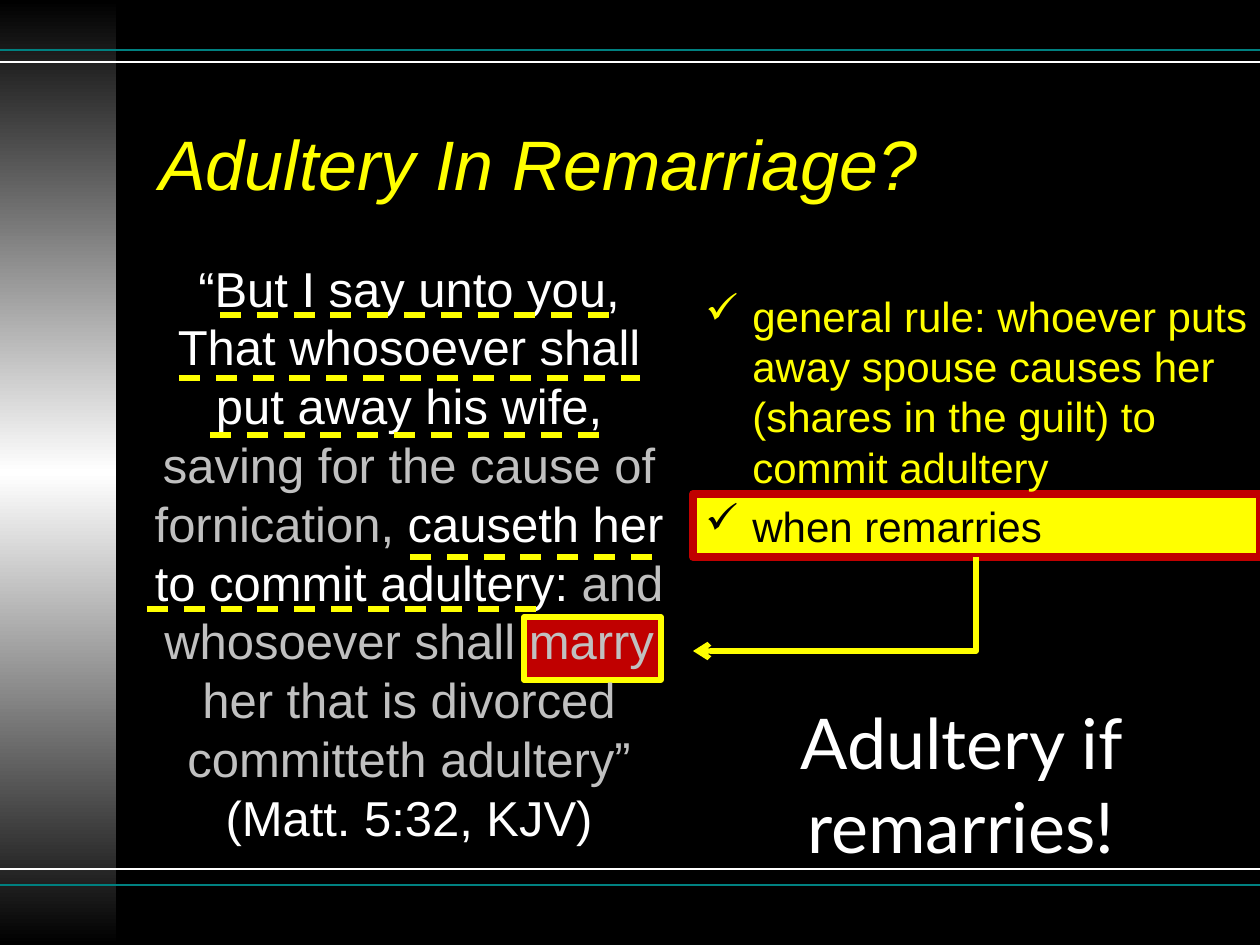
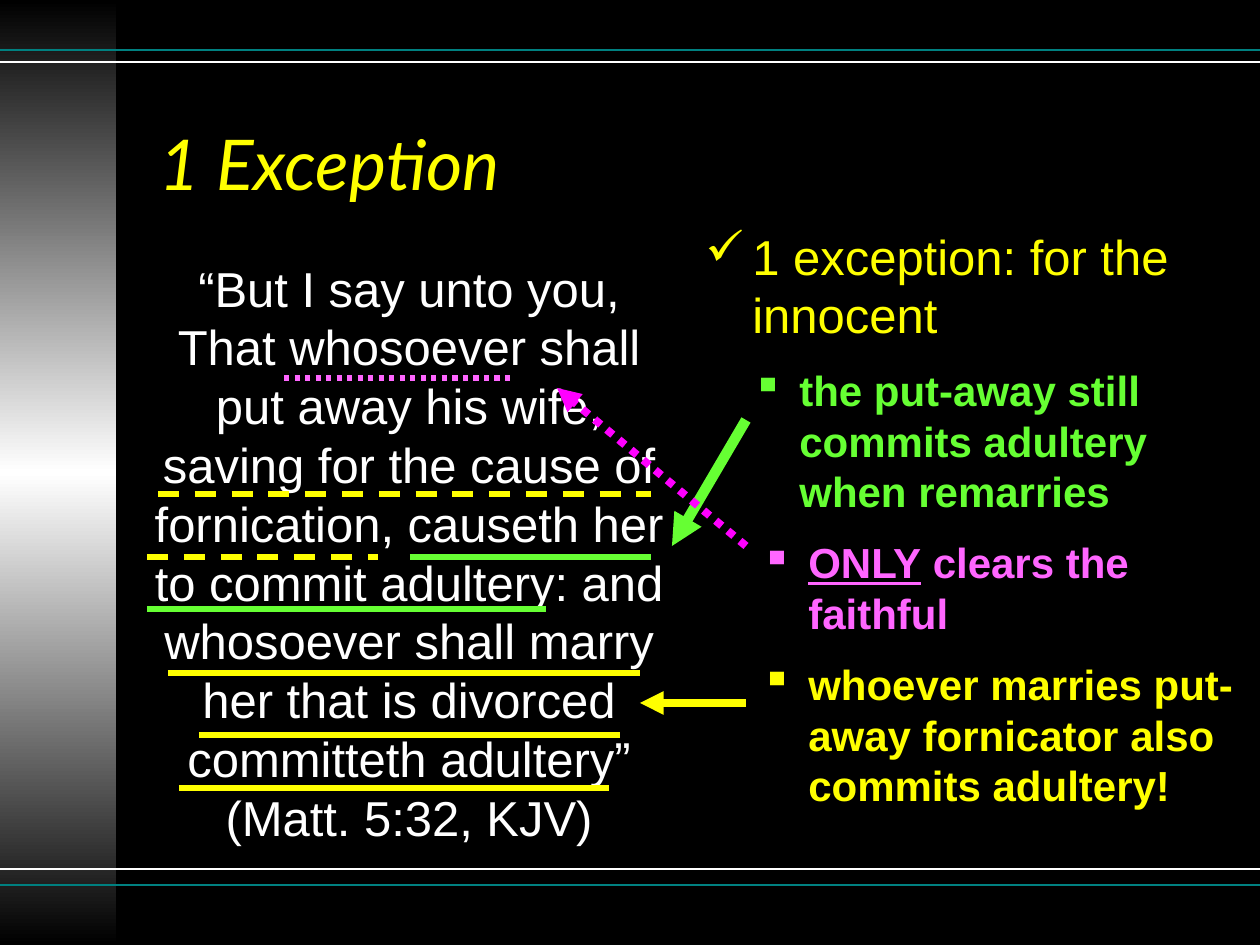
from copy import deepcopy

from lxml.etree import SubElement
from pptx import Presentation
from pptx.dml.color import RGBColor
from pptx.enum.shapes import MSO_CONNECTOR as CONN, MSO_SHAPE as SHAPE
from pptx.enum.text import MSO_ANCHOR as ANCHOR, PP_ALIGN as ALIGN
from pptx.oxml.ns import qn
from pptx.util import Emu, Pt

PX = 914400 / 126
W, H = 1260, 945

BLACK = RGBColor(0x00, 0x00, 0x00)
WHITE = RGBColor(0xFF, 0xFF, 0xFF)
SILVER = RGBColor(0xC0, 0xC0, 0xC0)
TEAL = RGBColor(0x00, 0x80, 0x80)
YELLOW = RGBColor(0xFF, 0xFF, 0x00)
RED = RGBColor(0xC0, 0x00, 0x00)
GREEN = RGBColor(0x66, 0xFF, 0x33)
PINK = RGBColor(0xFF, 0x66, 0xFF)
MAGENTA = RGBColor(0xFF, 0x00, 0xFF)

# Shared places: left, top, width, height
BAND = (0, 0, 116, H)
TITLE = (147, 84, 1071, 158)
VERSE_BOX = (136, 252, 546, 601)
RULES = [(50, TEAL), (62, WHITE), (869, WHITE), (885, TEAL)]

# Verse in parts, each with its colour on the first slide
VERSE = [
    ("“But I say unto you, That whosoever shall put away his wife, ", WHITE),
    ("saving for the cause of fornication, ", SILVER),
    ("causeth her to commit adultery: ", WHITE),
    ("and whosoever shall marry her that is divorced committeth adultery”", SILVER),
    (" (Matt. 5:32, KJV)", WHITE),
]
PLAIN_VERSE = "".join(part for part, _ in VERSE)

# Slide 1
RULE_TEXT = ("general rule: whoever puts away spouse causes her "
             "(shares in the guilt) to commit adultery")
RULE_BOX = (693, 284, 567, 217)
MARRY_BOX = (524, 617, 137, 63)
REMARRIES_BOX = (693, 494, 567, 63)
BEND = ((976, 557), (693, 651))
VERDICT_BOX = (693, 693, 536, 183)
RULE_UNDERLINES = [  # left, right, y
    (220, 609, 315), (179, 640, 378), (210, 599, 435),
    (410, 661, 557), (147, 546, 609),
]

# Slide 2
EXCEPTION_BOX = (693, 220, 567, 615)
EXCEPTIONS = [  # runs, format
    ([("1 exception: for the innocent", YELLOW)], dict(size=28, bullet="✓")),
    ([("the put-away still commits adultery when remarries", GREEN)],
     dict(indent=94)),
    ([("ONLY", PINK, True), (" clears the faithful", PINK)], dict(indent=103)),
    ([("whoever marries put-away fornicator also commits adultery!", YELLOW)],
     dict(indent=103)),
]
EXCEPTION_UNDERLINES = [  # left, right, y, colour, dash
    (158, 651, 494, YELLOW, "dash"), (147, 378, 557, YELLOW, "dash"),
    (410, 651, 557, GREEN, None), (147, 546, 609, GREEN, None),
    (284, 514, 378, PINK, "sysDot"), (168, 640, 673, YELLOW, None),
    (199, 620, 735, YELLOW, None), (179, 609, 788, YELLOW, None),
]
ARROWS = [  # from, to, colour, width, dash
    ((746, 420), (672, 546), GREEN, 6, None),
    ((746, 546), (557, 388), MAGENTA, 4.5, "sysDot"),
    ((746, 703), (640, 703), YELLOW, 4.5, None),
]


def px(*values):
    return [Emu(round(v * PX)) for v in values]


def add_text(tf, text, size=28, font="Arial", color=WHITE, bold=False, italic=False,
             align=ALIGN.LEFT, bullet=None, indent=47, first=True):
    """Write one paragraph; text is a string or a list of (text, colour, underline)."""
    tf.word_wrap = True
    p = tf.paragraphs[0] if first else tf.add_paragraph()
    p.alignment = align
    p.line_spacing = Pt(size * 1.2)
    p.space_before = Pt(0 if first else size / 2)
    if bullet:
        pPr = p._p.get_or_add_pPr()
        pPr.set("marL", str(px(indent)[0]))
        pPr.set("indent", str(px(-47)[0]))
        SubElement(pPr, qn("a:buChar")).set("char", bullet)
    runs = [(text, color)] if isinstance(text, str) else text
    for words, run_color, *underline in runs:
        r = p.add_run()
        r.text = words
        f = r.font
        f.name, f.size, f.bold, f.italic = font, Pt(size), bold, italic
        f.underline = bool(underline)
        f.color.rgb = run_color


def add_box(slide, place, text, **fmt):
    tf = slide.shapes.add_textbox(*px(*place)).text_frame
    add_text(tf, text, **fmt)
    return tf


def add_rect(slide, place, fill=None, line=None, width=0):
    sp = slide.shapes.add_shape(SHAPE.RECTANGLE, *px(*place))
    sp.shadow.inherit = False
    if fill is not None:
        sp.fill.solid()
        sp.fill.fore_color.rgb = fill
    if line is None:
        sp.line.fill.background()
    else:
        sp.line.color.rgb = line
        sp.line.width = Pt(width)
    sp.text_frame.vertical_anchor = ANCHOR.TOP
    return sp


def add_line(slide, start, end, color, width=3, dash=None, head=None, kind=CONN.STRAIGHT):
    c = slide.shapes.add_connector(kind, *px(*start, *end))
    c.line.color.rgb = color
    c.line.width = Pt(width)
    spPr = c._element.spPr
    ln = spPr.find(qn("a:ln"))
    if dash:
        SubElement(ln, qn("a:prstDash")).set("val", dash)
    if head:
        SubElement(ln, qn("a:tailEnd")).set("type", head)
    SubElement(spPr, qn("a:effectLst"))
    return c


def add_bend(slide, start, end, color):
    """Arrow that goes down, then left: a one-bend connector turned by 90 degrees."""
    (x1, y1), (x2, y2) = start, end
    cx, cy = (x1 + x2) / 2, (y1 + y2) / 2
    half_w, half_h = (y2 - y1) / 2, (x1 - x2) / 2
    c = add_line(slide, (cx - half_w, cy - half_h), (cx + half_w, cy + half_h),
                 color, head="arrow", kind=CONN.ELBOW)
    spPr = c._element.spPr
    spPr.find(qn("a:xfrm")).set("rot", str(90 * 60000))
    spPr.find(qn("a:prstGeom")).set("prst", "bentConnector2")


def add_base(prs):
    """New slide with black background, side band and rules."""
    slide = prs.slides.add_slide(prs.slide_layouts[6])
    bg = slide.background.fill
    bg.solid()
    bg.fore_color.rgb = BLACK
    fill = add_rect(slide, BAND).fill
    fill.gradient()
    fill.gradient_angle = 90
    last = fill.gradient_stops[1]._gs
    last.addprevious(deepcopy(last))
    for stop, pos, color in zip(fill.gradient_stops, (0, 0.5, 1), (BLACK, WHITE, BLACK)):
        stop.position = pos
        stop.color.rgb = color
    for y, color in RULES:
        add_line(slide, (0, y), (W, y), color, width=1)
    return slide


def add_title(slide, text, font):
    tf = add_box(slide, TITLE, text, size=40, font=font, color=YELLOW, italic=True)
    tf.vertical_anchor = ANCHOR.MIDDLE


def build_remarriage(prs):
    s = add_base(prs)
    add_rect(s, MARRY_BOX, RED, YELLOW, 3)
    sp = add_rect(s, REMARRIES_BOX, YELLOW, RED, 4.5)
    add_text(sp.text_frame, "when remarries", size=24, color=BLACK, bullet="✓")
    add_bend(s, *BEND, YELLOW)
    add_title(s, "Adultery In Remarriage?", "Arial")
    add_box(s, VERSE_BOX, VERSE, align=ALIGN.CENTER)
    add_box(s, RULE_BOX, RULE_TEXT, size=24, color=YELLOW, bullet="✓")
    for left, right, y in RULE_UNDERLINES:
        add_line(s, (left, y), (right, y), YELLOW, dash="dash")
    add_box(s, VERDICT_BOX, "Adultery if remarries!", size=40, font="Lato",
            align=ALIGN.CENTER)


def build_exception(prs):
    s = add_base(prs)
    add_title(s, "1 Exception", "Lato")
    add_box(s, VERSE_BOX, PLAIN_VERSE, align=ALIGN.CENTER)
    (lead, lead_fmt), *points = EXCEPTIONS
    tf = add_box(s, EXCEPTION_BOX, lead, **lead_fmt)
    for runs, fmt in points:
        add_text(tf, runs, size=24, bold=True, bullet="▪", first=False, **fmt)
    for left, right, y, color, dash in EXCEPTION_UNDERLINES:
        add_line(s, (left, y), (right, y), color, dash=dash)
    for start, end, color, width, dash in ARROWS:
        add_line(s, start, end, color, width, dash, head="triangle")


def main():
    prs = Presentation()
    prs.slide_width, prs.slide_height = px(W, H)
    build_remarriage(prs)
    build_exception(prs)
    prs.save("out.pptx")


if __name__ == "__main__":
    main()
